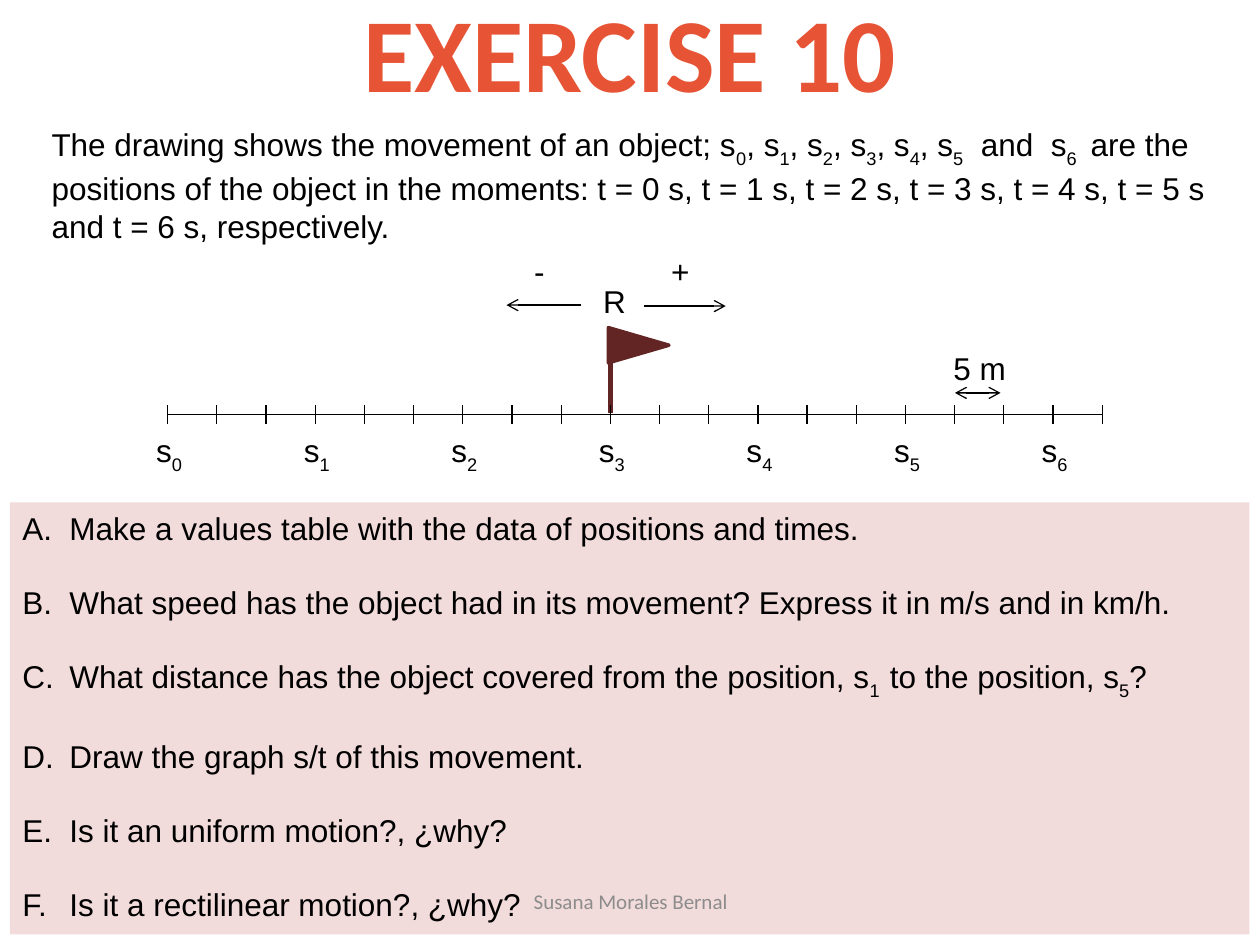
from dataclasses import dataclass

from lxml import etree
from pptx import Presentation
from pptx.dml.color import RGBColor
from pptx.enum.shapes import MSO_CONNECTOR, MSO_SHAPE
from pptx.enum.text import MSO_ANCHOR, PP_ALIGN
from pptx.oxml.ns import qn
from pptx.util import Cm, Pt

LINE = MSO_CONNECTOR.STRAIGHT
RECT = MSO_SHAPE.RECTANGLE
TRI = MSO_SHAPE.ISOSCELES_TRIANGLE
TOP, MID = MSO_ANCHOR.TOP, MSO_ANCHOR.MIDDLE
LEFT, CENTER = PP_ALIGN.LEFT, PP_ALIGN.CENTER


@dataclass(frozen=True)
class Theme:
    ink: str = "000000"
    title: str = "E75335"
    flag: str = "632523"
    panel: str = "F2DCDB"
    foot: str = "8C8C8C"
    big: int = 60
    body: int = 18
    small: int = 12
    head: str = "Calibri"
    sans: str = "Arial"


def put(item, values):
    for name, value in values.items():
        setattr(item, name, value)


def color(code):
    return RGBColor.from_string(code)


class Pen:
    def __init__(self, slide, theme):
        self.shapes = slide.shapes
        self.theme = theme

    def runs(self, para, text, **style):
        look = {"size": self.theme.body, "name": self.theme.sans,
                "color": self.theme.ink, "bold": False} | style
        for i, part in enumerate(text.split("~")):
            if not part:
                continue
            run = para.add_run()
            run.text = part
            put(run.font, {"size": Pt(look["size"]), "name": look["name"],
                           "bold": look["bold"]})
            run.font.color.rgb = color(look["color"])
            if i % 2:
                run.font._element.set("baseline", "-30000")

    def text(self, box, text, align=LEFT, anchor=TOP, **style):
        frame = self.shapes.add_textbox(*map(Cm, box)).text_frame
        put(frame, {"word_wrap": True, "vertical_anchor": anchor})
        para = frame.paragraphs[0]
        para.alignment = align
        self.runs(para, text, **style)

    def line(self, start, end, code=None, width=0.75, ends=()):
        link = self.shapes.add_connector(LINE, *map(Cm, start + end))
        link.line.width = Pt(width)
        link.line.color.rgb = color(code or self.theme.ink)
        ln = link.line._get_or_add_ln()
        for tip in ends:
            etree.SubElement(ln, qn(f"a:{tip}"), type="arrow")
        etree.SubElement(link._element.spPr, qn("a:effectLst"))

    def shape(self, kind, box, code, edge=0, turn=0):
        shape = self.shapes.add_shape(kind, *map(Cm, box))
        shape.rotation = turn
        shape.shadow.inherit = False
        shape.fill.solid()
        shape.fill.fore_color.rgb = color(code)
        if edge:
            shape.line.width = Pt(edge)
            shape.line.color.rgb = color(code)
        else:
            shape.line.fill.background()
        return shape

    def panel(self, box, items):
        frame = self.shape(RECT, box, self.theme.panel).text_frame
        put(frame, {"word_wrap": True, "vertical_anchor": TOP})
        for i, item in enumerate(items):
            para = frame.add_paragraph() if i else frame.paragraphs[0]
            put(para, {"alignment": LEFT, "space_before": Pt(20.7 if i else 0)})
            props = para._p.get_or_add_pPr()
            for key, value in {"marL": 0.95, "indent": -0.95}.items():
                props.set(key, str(Cm(value)))
            etree.SubElement(props, qn("a:buFont"), typeface=self.theme.sans)
            etree.SubElement(props, qn("a:buAutoNum"), type="alphaUcPeriod")
            self.runs(para, item)


def main():
    deck = Presentation()
    put(deck, {"slide_width": Cm(25.4), "slide_height": Cm(19.05)})
    theme = Theme()
    pen = Pen(deck.slides.add_slide(deck.slide_layouts[6]), theme)

    pen.text((1.27, -0.58, 22.86, 3.18), "EXERCISE 10", CENTER, MID,
             size=theme.big, name=theme.head, color=theme.title, bold=True)

    first, last, steps, axis = 3.38, 22.22, 19, 8.36
    gap = (last - first) / steps
    mast = first + 9 * gap
    pen.line((mast, 8.33), (mast, 6.76), theme.flag, 3)
    pen.line((first, axis), (last, axis))
    for i in range(steps + 1):
        x = first + i * gap
        pen.line((x, axis - 0.19), (x, axis + 0.19))
    pen.shape(TRI, (12.52, 6.35, 0.71, 1.22), theme.flag, 2, 90)

    for start, end, y, ends in (
        (11.71, 10.21, 6.15, ["tailEnd"]),
        (12.98, 14.63, 6.17, ["tailEnd"]),
        (19.25, 20.17, 7.92, ["headEnd", "tailEnd"]),
    ):
        pen.line((start, y), (end, y), ends=ends)

    for x, y, width, label in (
        (11.91, 5.56, 1.5, "R"),
        (13.28, 4.95, 0.95, "+"),
        (10.52, 4.95, 0.95, "-"),
        (18.97, 6.91, 2.77, "5 m"),
    ):
        pen.text((x, y, width, 1.02), label)
    for i in range(7):
        pen.text((2.9 + 3 * i * gap, 8.56, 1.25, 1.02), f"s~{i}~")

    pen.text(
        (0.79, 2.39, 23.83, 2.57),
        "The drawing shows the movement of an object; "
        "s~0~, s~1~, s~2~, s~3~, s~4~, s~5~  and  s~6 ~ are the positions "
        "of the object in the moments: t = 0 s, t = 1 s, t = 2 s, t = 3 s, "
        "t = 4 s, t = 5 s and t = 6 s, respectively.")

    pen.panel((0.2, 10.13, 24.99, 8.71), (
        "Make a values table with the data of positions and times.",
        "What speed has the object had in its movement? "
        "Express it in m/s and in km/h.",
        "What distance has the object covered from the position, "
        "s~1  ~to the position, s~5~?",
        "Draw the graph s/t of this movement.",
        "Is it an uniform motion?, ¿why?",
        "Is it a rectilinear motion?, ¿why?",
    ))
    pen.text((8.69, 17.65, 8.05, 1.02), "Susana Morales Bernal", CENTER, MID,
             size=theme.small, name=theme.head, color=theme.foot)
    deck.save("out.pptx")


if __name__ == "__main__":
    main()
